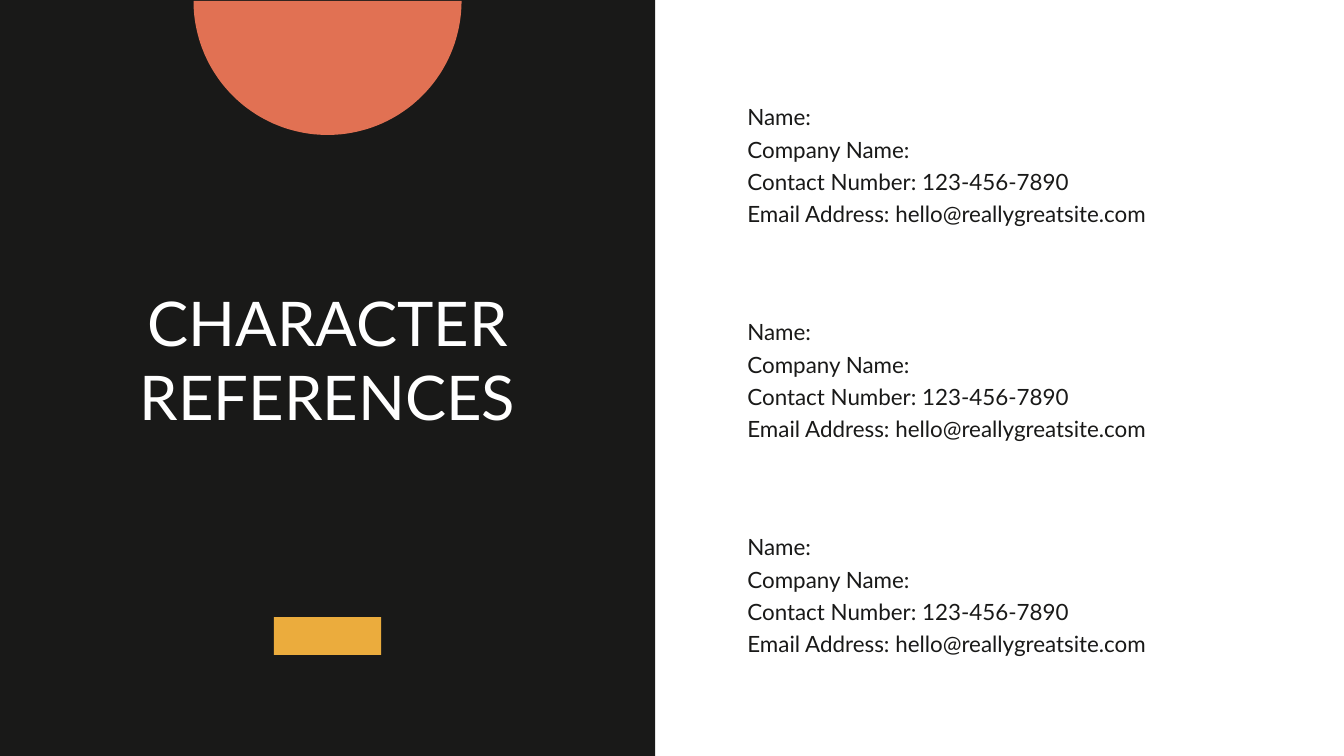
import math

from pptx import Presentation
from pptx.dml.color import RGBColor
from pptx.enum import shapes, text
from pptx.util import Pt

DARK, WHITE, CORAL, GOLD = "191918", "FFFFFF", "E17153", "EBAC3D"
REFERENCE_LINES = (
    "Name:",
    "Company Name:",
    "Contact Number: 123-456-7890",
    "Email Address: hello@reallygreatsite.com",
)


def color(hex_string):
    """Return the RGB colour for a hex string."""
    return RGBColor.from_string(hex_string)


def paint(shape, hex_string):
    """Give a shape a flat fill with no outline or shadow."""
    shape.fill.solid()
    shape.fill.fore_color.rgb = color(hex_string)
    shape.line.fill.background()
    shape.shadow.inherit = False


def add_rectangle(slide, left, top, width, height, hex_string):
    """Add a plain filled rectangle."""
    rectangle = slide.shapes.add_shape(
        shapes.MSO_SHAPE.RECTANGLE, Pt(left), Pt(top), Pt(width), Pt(height))
    paint(rectangle, hex_string)
    return rectangle


def add_half_disc(slide, center, top, radius, hex_string):
    """Add a half disc that hangs from its flat top edge."""
    angles = [math.radians(degree) for degree in range(0, 181, 2)]
    points = [(Pt(center + radius * math.cos(angle)),
               Pt(top + radius * math.sin(angle))) for angle in angles]
    builder = slide.shapes.build_freeform(*points[0])
    builder.add_line_segments(points[1:], close=True)
    paint(builder.convert_to_shape(), hex_string)


def prepare_frame(shape):
    """Set a wrapping, top-anchored text frame without margins."""
    frame = shape.text_frame
    frame.word_wrap = True
    frame.auto_size = text.MSO_AUTO_SIZE.NONE
    frame.vertical_anchor = text.MSO_ANCHOR.TOP
    frame.margin_left = frame.margin_top = frame.margin_right = frame.margin_bottom = 0
    return frame


def add_run(paragraph, wording, size, hex_string):
    """Add a formatted run to a paragraph."""
    run = paragraph.add_run()
    run.text = wording
    run.font.name = "Lato"
    run.font.size = Pt(size)
    run.font.color.rgb = color(hex_string)


def add_title_panel(slide, left, top, width, height):
    """Build the dark panel with its title, half disc and accent bar."""
    center = left + width / 2
    panel = add_rectangle(slide, left, top, width, height, DARK)
    add_rectangle(slide, center - 28.8, top + 330.6, 57.6, 20.2, GOLD)

    title = slide.shapes.title
    title.left, title.top = Pt(center - 132), Pt(top + 152.6)
    title.width, title.height = Pt(264), Pt(80)
    paragraph = prepare_frame(title).paragraphs[0]
    paragraph.alignment = text.PP_ALIGN.CENTER
    add_run(paragraph, "CHARACTER REFERENCES", 33, WHITE)
    panel.element.addnext(title.element)

    add_half_disc(slide, center, top + 0.5, 71.8, CORAL)


def add_references(slide, left, top, width, height, count=3, pitch=115.2):
    """Stack equally spaced reference blocks down the column."""
    for index in range(count):
        box = slide.shapes.add_textbox(
            Pt(left), Pt(top + index * pitch), Pt(width), Pt(height))
        frame = prepare_frame(box)
        for number, wording in enumerate(REFERENCE_LINES):
            paragraph = frame.add_paragraph() if number else frame.paragraphs[0]
            paragraph.line_spacing = 1.2
            add_run(paragraph, wording, 12, DARK)


def main():
    """Build and save the slide."""
    presentation = Presentation()
    presentation.slide_width, presentation.slide_height = Pt(720), Pt(405)
    slide = presentation.slides.add_slide(presentation.slide_layouts[5])
    slide.background.fill.solid()
    slide.background.fill.fore_color.rgb = color(WHITE)
    add_title_panel(slide, 0, 0, 351, 405)
    add_references(slide, 400.4, 52.6, 270, 67)
    presentation.save("out.pptx")


if __name__ == "__main__":
    main()
